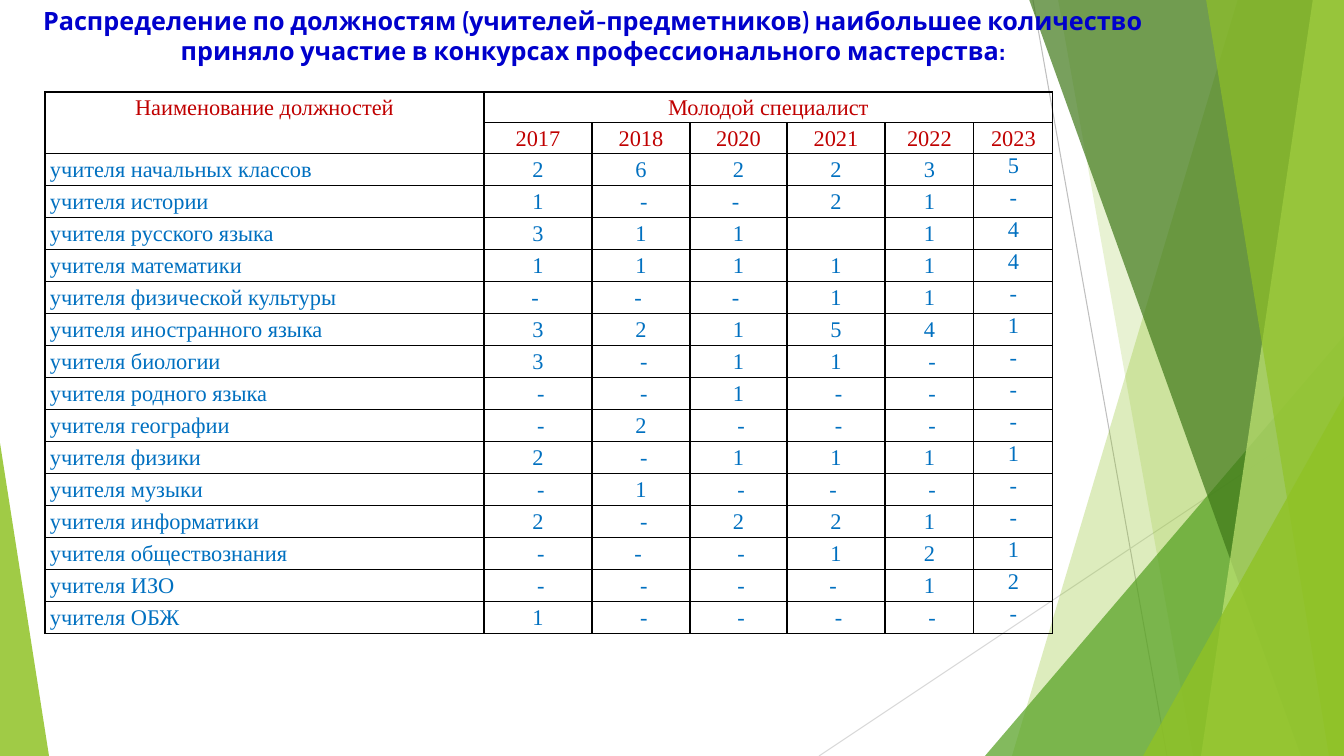
import pptx
import pptx.util
import pptx.dml.color
import pptx.enum.shapes
import pptx.enum.text
import pptx.oxml.ns
import lxml.etree

RGBColor = pptx.dml.color.RGBColor
ALIGN = pptx.enum.text.PP_ALIGN
qn = pptx.oxml.ns.qn

LIME = RGBColor(0x90, 0xC2, 0x26)
GREEN = RGBColor(0x54, 0xA0, 0x21)
DARK_GREEN = RGBColor(0x3F, 0x78, 0x19)
PALE_LIME = RGBColor(0xC0, 0xE4, 0x74)
GRAY = RGBColor(0xBF, 0xBF, 0xBF)
LIGHT_GRAY = RGBColor(0xD9, 0xD9, 0xD9)
TITLE_BLUE = RGBColor(0x00, 0x00, 0xCC)
HEAD_RED = RGBColor(0xC0, 0x00, 0x00)
BODY_BLUE = RGBColor(0x00, 0x70, 0xC0)
BLACK = RGBColor(0x00, 0x00, 0x00)

WIDTH, HEIGHT = 1344, 756
SCALE = 914400 / 100.8
NBSP = chr(160)

TITLE = ("Распределение по должностям (учителей-предметников) наибольшее количество "
         "приняло участие в конкурсах профессионального мастерства:")
YEARS = ["2017", "2018", "2020", "2021", "2022", "2023"]
COLUMNS = [439, 108, 98, 97, 98, 89, 79]
HEAD_ROW, BODY_ROW = 29, 32
TEACHERS = [
    ("начальных классов", "2,6,2,2,3,5"),
    ("истории", "1,_-,-_,2,1,-"),
    ("русского языка", "3,1,1,,1,4"),
    ("математики", "1,1,1,1,1,4"),
    ("физической культуры", "-_,-_,-_,1,1,-"),
    ("иностранного языка", "3,2,1,5,4,1"),
    ("биологии", "3,_-,1,1,_-,-"),
    ("родного языка", "_-,_-,1,_-,_-,-"),
    ("географии", "_-,2,_-,_-,_-,-"),
    ("физики", "2,_-,1,1,1,1"),
    ("музыки", "_-,1,_-,-_,_-,-"),
    ("информатики", "2,_-,2,2,1,-"),
    ("обществознания", "_-,-_,_-,1,2,1"),
    ("ИЗО", "_-,_-,_-,-_,1,2"),
    ("ОБЖ", "1,_-,_-,_-,_-,-"),
]


def px(n):
    return pptx.util.Emu(round(n * SCALE))


class Deck:
    title_font = "Cabin"
    table_font = "Times New Roman"

    def __init__(self):
        self.prs = pptx.Presentation()
        self.prs.slide_width, self.prs.slide_height = px(WIDTH), px(HEIGHT)
        self.s = self.prs.slides.add_slide(self.prs.slide_layouts[6])

    def line(self, x1, y1, x2, y2, color):
        c = self.s.shapes.add_connector(
            pptx.enum.shapes.MSO_CONNECTOR.STRAIGHT, px(x1), px(y1), px(x2), px(y2))
        c.line.color.rgb = color
        c.line.width = pptx.util.Pt(0.75)
        lxml.etree.SubElement(c._element.spPr, qn("a:effectLst"))

    def paint(self, sp, color, opacity):
        sp.shadow.inherit = False
        sp.line.fill.background()
        sp.fill.solid()
        sp.fill.fore_color.rgb = color
        clr = sp._element.spPr.find(qn("a:solidFill")).find(qn("a:srgbClr"))
        lxml.etree.SubElement(clr, qn("a:alpha"), val=str(opacity * 1000))

    def band(self, top_x, bottom_x, color, opacity):
        builder = self.s.shapes.build_freeform(top_x, -1, scale=SCALE)
        builder.add_line_segments([(WIDTH, -1), (WIDTH, HEIGHT), (bottom_x, HEIGHT)])
        self.paint(builder.convert_to_shape(), color, opacity)

    def triangle(self, x, y, w, apex, color, opacity):
        sp = self.s.shapes.add_shape(
            pptx.enum.shapes.MSO_SHAPE.ISOSCELES_TRIANGLE, px(x), px(y), px(w), px(HEIGHT - y))
        sp.adjustments[0] = apex
        self.paint(sp, color, opacity)

    def paragraph(self, p, text, font, size, color, align, bold=False):
        p.text = text
        p.alignment = align
        p.font.name = font
        p.font.size = pptx.util.Pt(size)
        p.font.color.rgb = color
        p.font.bold = bold

    def title(self, x, y, w, h, text):
        tf = self.s.shapes.add_textbox(px(x), px(y), px(w), px(h)).text_frame
        tf.word_wrap = True
        self.paragraph(tf.paragraphs[0], text, self.title_font, 18, TITLE_BLUE, ALIGN.CENTER, True)

    def cell(self, cell, text, color, align, spacing):
        cell.margin_left = cell.margin_right = px(5)
        cell.margin_top = cell.margin_bottom = 0
        p = cell.text_frame.paragraphs[0]
        self.paragraph(p, text, self.table_font, 16, color, align)
        if text:
            p.line_spacing = spacing
        tcPr = cell._tc.get_or_add_tcPr()
        for side in ("a:lnL", "a:lnR", "a:lnT", "a:lnB"):
            ln = lxml.etree.SubElement(tcPr, qn(side), w=str(int(pptx.util.Pt(1))))
            fill = lxml.etree.SubElement(ln, qn("a:solidFill"))
            lxml.etree.SubElement(fill, qn("a:srgbClr"), val=str(BLACK))
        cell.fill.background()

    def table(self, x, y, columns, heights, rows, head_rows):
        table = self.s.shapes.add_table(
            len(rows), len(columns), px(x), px(y), px(sum(columns)), px(sum(heights))).table
        table.first_row = table.horz_banding = False
        for column, width in zip(table.columns, columns):
            column.width = px(width)
        for i, (row, height) in enumerate(zip(rows, heights)):
            table.rows[i].height = px(height)
            head = i < head_rows
            for j, text in enumerate(row):
                last = j == len(row) - 1
                self.cell(table.cell(i, j), text,
                          HEAD_RED if head else BODY_BLUE,
                          ALIGN.CENTER if head or j else ALIGN.JUSTIFY,
                          1.0 if last and not head else 1.15)
        return table


def main():
    deck = Deck()
    deck.line(1033, 0, 1167, HEIGHT, GRAY)
    deck.line(WIDTH, 406, 819, HEIGHT, LIGHT_GRAY)
    deck.band(1238, 1012, LIME, 30)
    deck.band(1058, 1193, LIME, 20)
    deck.triangle(985, 336, 359, 1, GREEN, 72)
    deck.band(1029, 1301, DARK_GREEN, 70)
    deck.band(1313, 1201, PALE_LIME, 70)
    deck.band(1206, 1329, LIME, 65)
    deck.triangle(1143, 396, 201, 1, LIME, 80)
    deck.triangle(0, 443, 49, 0, LIME, 85)

    deck.title(28, 0, 1130, 72, TITLE)

    rows = [["Наименование должностей", "Молодой специалист"] + [""] * 5, [""] + YEARS]
    for subject, counts in TEACHERS:
        rows.append(["учителя " + subject] + counts.replace("_", NBSP).split(","))
    heights = [HEAD_ROW] * 2 + [BODY_ROW] * len(TEACHERS)
    table = deck.table(45, 92, COLUMNS, heights, rows, 2)
    table.cell(0, 0).merge(table.cell(1, 0))
    table.cell(0, 1).merge(table.cell(0, 6))

    deck.prs.save("out.pptx")


if __name__ == "__main__":
    main()
